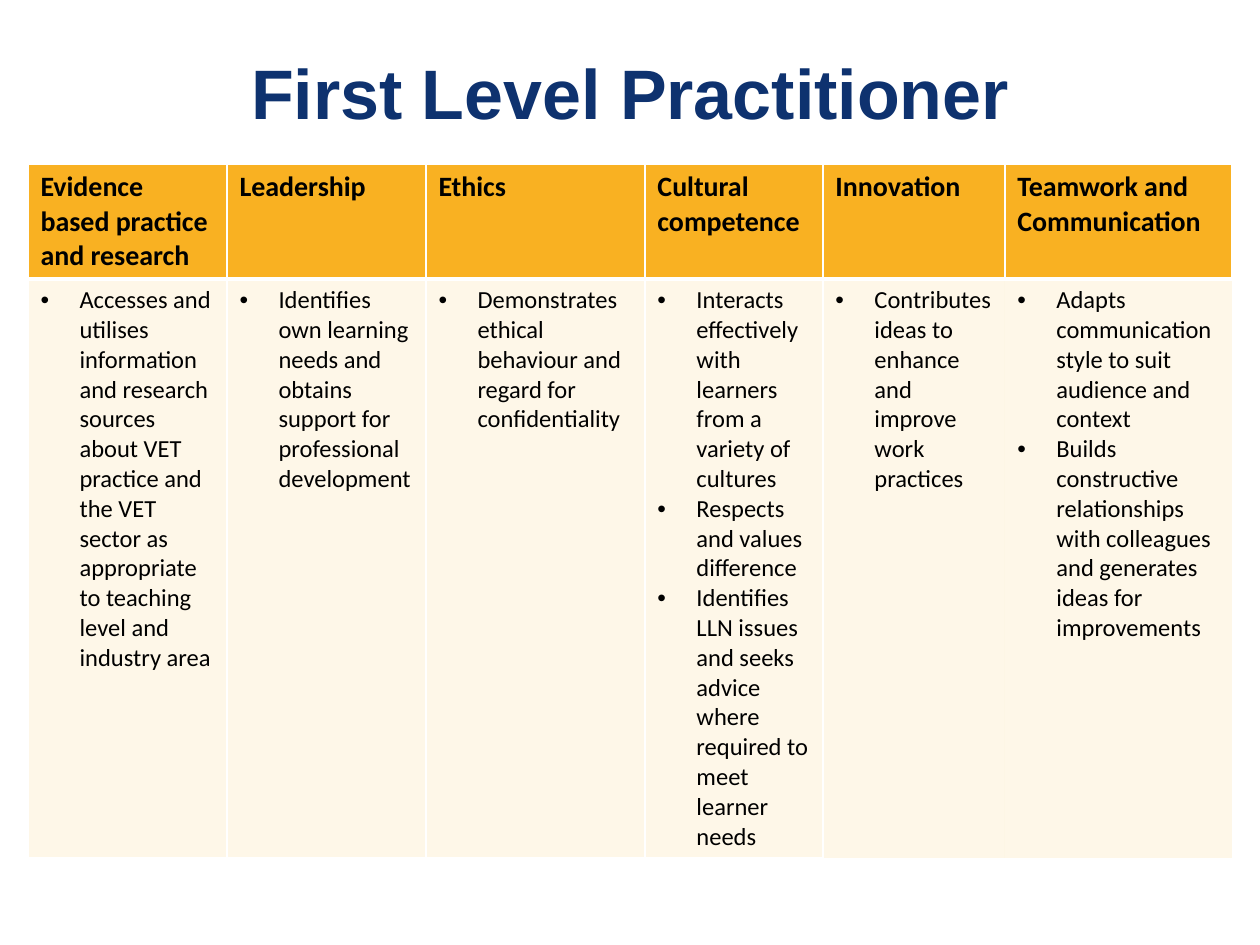
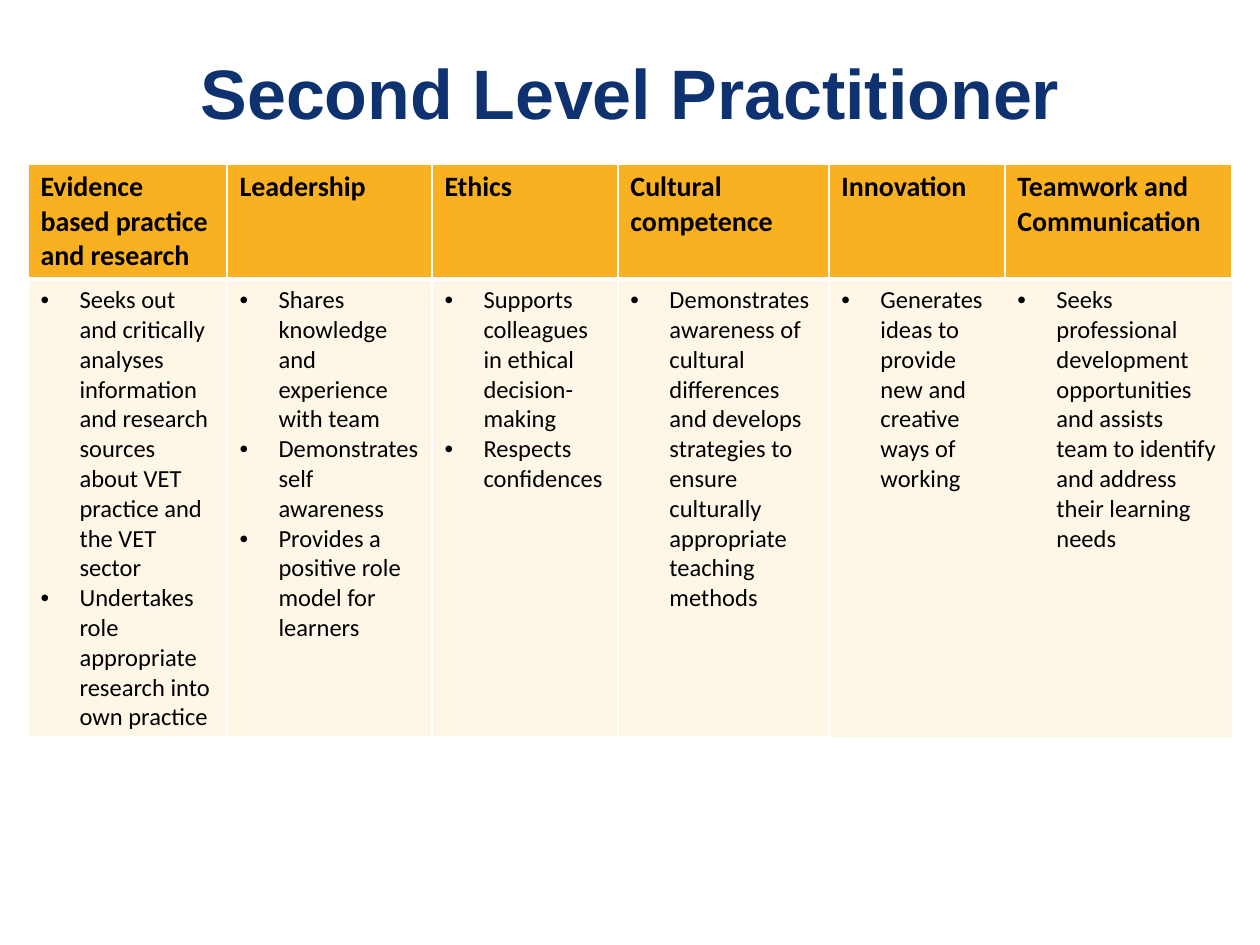
from lxml import etree
from pptx import Presentation
from pptx import util as u
from pptx.dml.color import RGBColor
from pptx.enum import text
from pptx.oxml.ns import qn

HEADS = ["Evidence based practice and research", "Leadership", "Ethics",
         "Cultural competence", "Innovation", "Teamwork and Communication"]

LEVELS = [
    {
        "title": "First Level Practitioner",
        "cols": [199, 199, 219, 178, 182, 227],
        "rows": [115, 579],
        "skills": [
            ["Accesses and utilises information and research sources about VET "
             "practice and the VET sector as appropriate to teaching level and "
             "industry area"],
            ["Identifies own learning needs and obtains support for "
             "professional development"],
            ["Demonstrates ethical behaviour and regard for confidentiality"],
            ["Interacts effectively with learners from a variety of cultures",
             "Respects and values difference",
             "Identifies LLN issues and seeks advice where required to meet "
             "learner needs"],
            ["Contributes ideas to enhance and improve work practices"],
            ["Adapts communication style to suit audience and context",
             "Builds constructive relationships with colleagues and generates "
             "ideas for improvements"],
        ],
    },
    {
        "title": "Second Level Practitioner",
        "cols": [199, 205, 186, 211, 176, 227],
        "rows": [115, 458],
        "skills": [
            ["Seeks out and critically analyses information and research "
             "sources about VET practice and the VET sector",
             "Undertakes role appropriate research into own practice"],
            ["Shares knowledge and experience with team",
             "Demonstrates self awareness",
             "Provides a positive role model for learners"],
            ["Supports colleagues in ethical decision-making",
             "Respects confidences"],
            ["Demonstrates awareness of cultural differences and develops "
             "strategies to ensure culturally appropriate teaching methods"],
            ["Generates ideas to provide new and creative ways of working"],
            ["Seeks professional development opportunities and assists team to "
             "identify and address their learning needs"],
        ],
    },
]

NAVY = RGBColor(0x0E, 0x32, 0x6F)
AMBER = RGBColor(0xF9, 0xB1, 0x22)
BLACK = RGBColor(0, 0, 0)
WHITE = RGBColor(255, 255, 255)

SLIDE = (1260, 945)
TITLE = (63, 38, 1134, 107)
LEFT, TOP = 28, 164
INDENT = 39
TINT = 10


def px(n):
    return round(n * 914400 / 126)


def style(font, name, size, color, bold):
    font.name, font.size, font.bold = name, u.Pt(size), bold
    font.color.rgb = color


def add_title(slide, words):
    frame = slide.shapes.add_textbox(*map(px, TITLE)).text_frame
    frame.word_wrap = True
    frame.vertical_anchor = text.MSO_ANCHOR.MIDDLE
    frame.text = words
    par = frame.paragraphs[0]
    par.alignment = text.PP_ALIGN.CENTER
    style(par.runs[0].font, "Arial", 40, NAVY, True)


def add_bullet(par):
    props = par._p.get_or_add_pPr()
    props.set("marL", str(px(INDENT)))
    props.set("indent", str(-px(INDENT)))
    etree.SubElement(props, qn("a:buFont")).set("typeface", "Arial")
    etree.SubElement(props, qn("a:buChar")).set("char", "•")


def set_lines(cell, sides):
    props = cell._tc.get_or_add_tcPr()
    for spot, (side, width) in enumerate(sides.items()):
        line = etree.Element(qn("a:ln" + side), w=str(u.Pt(width)))
        if width:
            solid = etree.SubElement(line, qn("a:solidFill"))
            etree.SubElement(solid, qn("a:srgbClr")).set("val", str(WHITE))
        else:
            etree.SubElement(line, qn("a:noFill"))
        props.insert(spot, line)


def fill_cell(cell, lines, head, sides):
    cell.fill.solid()
    cell.fill.fore_color.rgb = AMBER
    if not head:
        color = cell._tc.tcPr.find(".//" + qn("a:srgbClr"))
        etree.SubElement(color, qn("a:alpha")).set("val", str(TINT * 1000))
    set_lines(cell, sides)
    cell.text_frame.text = "\n".join(lines)
    for par in cell.text_frame.paragraphs:
        if not head:
            add_bullet(par)
        style(par.runs[0].font, "Calibri", 16 if head else 14, BLACK, head)


def add_grid(slide, level):
    cols, rows = level["cols"], level["rows"]
    frame = slide.shapes.add_table(len(rows), len(cols), px(LEFT), px(TOP),
                                   px(sum(cols)), px(sum(rows)))
    grid = frame.table
    for col, width in zip(grid.columns, cols):
        col.width = px(width)
    for row, height in zip(grid.rows, rows):
        row.height = px(height)
    last = len(cols) - 1
    for i, (name, skills) in enumerate(zip(HEADS, level["skills"])):
        fill_cell(grid.cell(0, i), [name], True,
                  {"L": 1, "R": 1, "T": 1, "B": 3})
        fill_cell(grid.cell(1, i), skills, False,
                  {"L": int(i < last), "R": int(i < last - 1), "T": 3,
                   "B": int(i < last - 1)})


def main():
    deck = Presentation()
    deck.slide_width, deck.slide_height = map(px, SLIDE)
    for level in LEVELS:
        slide = deck.slides.add_slide(deck.slide_layouts[6])
        add_title(slide, level["title"])
        add_grid(slide, level)
    deck.save("out.pptx")


if __name__ == "__main__":
    main()
